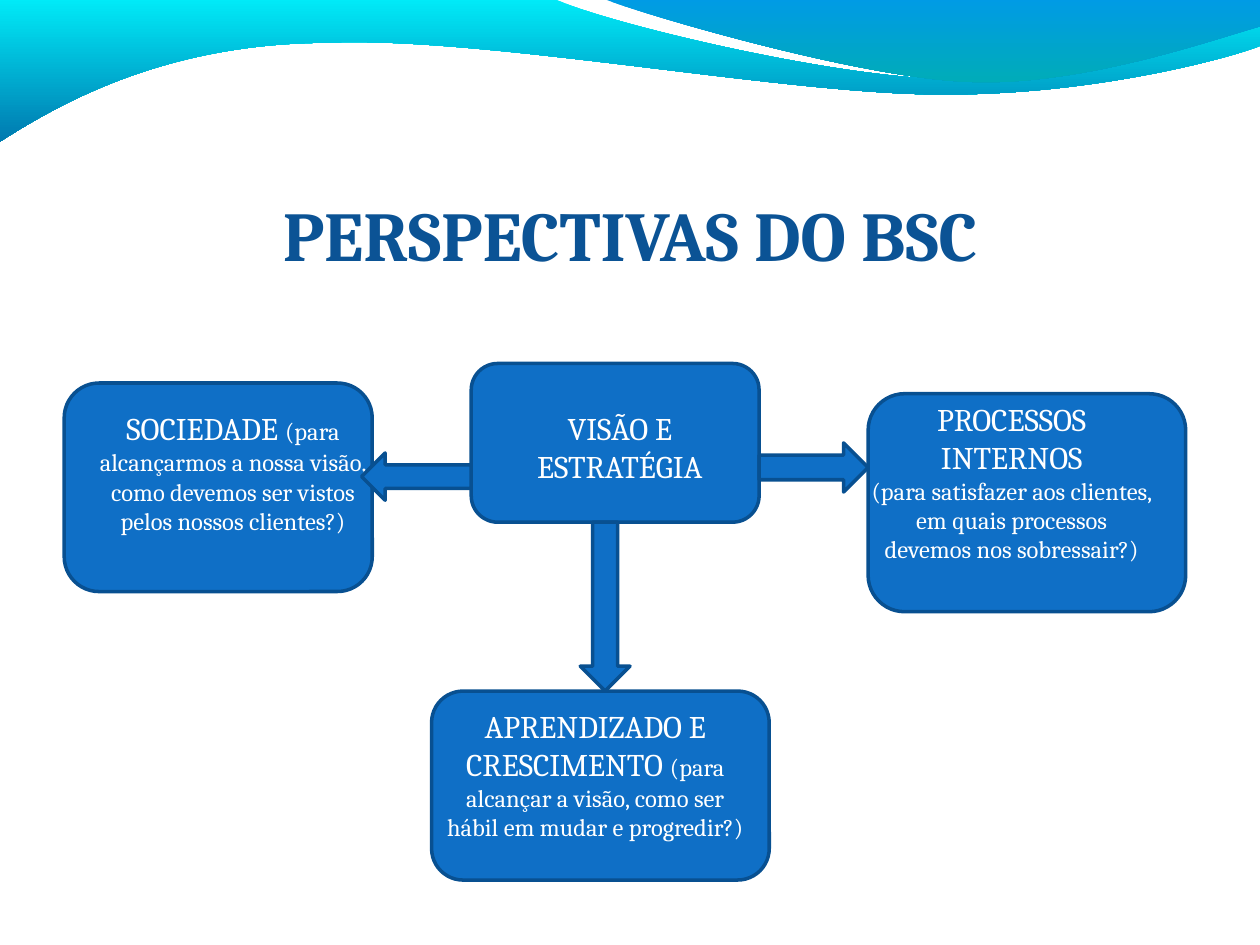
from collections import namedtuple

from lxml import etree
from pptx import Presentation
from pptx.dml.color import RGBColor
from pptx.enum.shapes import MSO_SHAPE
from pptx.enum.text import MSO_ANCHOR, MSO_AUTO_SIZE, PP_ALIGN
from pptx.oxml.ns import qn
from pptx.util import Inches, Pt

ROUNDED = MSO_SHAPE.ROUNDED_RECTANGLE
DOWN, LEFT, RIGHT = MSO_SHAPE.DOWN_ARROW, MSO_SHAPE.LEFT_ARROW, MSO_SHAPE.RIGHT_ARROW
TOP, CENTER, FIXED = MSO_ANCHOR.TOP, PP_ALIGN.CENTER, MSO_AUTO_SIZE.NONE

WIDTH, HEIGHT = Inches(10), Inches(7.5)
UNIT = WIDTH / 100  # the slide is a grid of 100 columns by 75 rows
TITLE_ONLY = 5

COLORS = {
    "fill": "0F6FC6", "line": "085091", "title": "0B5395", "text": "FFFFFF",
    "cyan": "00EBF8", "deep": "0079AF", "blue": "009BE5", "teal": "00ADB6",
}
HEADING = {"name": "Cambria", "size": Pt(18), "bold": False, "color": "text"}
DETAIL = {**HEADING, "size": Pt(14)}
TITLE = {"name": "Cambria", "size": Pt(40), "bold": True, "color": "title"}

Box = namedtuple("Box", "left top width height")

# Each wave is a start point followed by line ends (1 point) or Bézier curves (3 points).
WAVES = [
    ("cyan", "deep", [
        [(0, -0.1)], [(44, -0.1)],
        [(47.6, 1.7), (66.4, 6.3), (75.8, 6.3)],
        [(85.3, 6.3), (95.8, 2.6), (100, 0.9)],
        [(100.1, 3.6)],
        [(98.3, 4.4), (87, 7.6), (74.6, 7.5)],
        [(62.2, 7.5), (38.2, 2.8), (25.7, 3.4)],
        [(12.9, 3.5), (4.6, 8.3), (-0.1, 11.3)],
    ]),
    ("blue", "teal", [
        [(47.9, -0.1)],
        [(50.9, 1.1), (68.2, 6.2), (76.9, 6.5)],
        [(85.6, 6.9), (96.1, 3.2), (100, 2.1)],
        [(100, 0)],
    ]),
]

HUB = Box(37.4, 28.85, 22.85, 12.6)
# Card box, text box relative to the card, paragraphs of runs.
CARDS = [
    (HUB, Box(3.15, 3.15, 17.3, 7), [[("VISÃO E ESTRATÉGIA", HEADING)]]),
    (Box(68.9, 31.25, 25.2, 17.3), Box(-0.8, 0, 24.4, 16.4), [
        [("PROCESSOS INTERNOS", HEADING)],
        [("(para satisfazer aos clientes, em quais processos devemos nos sobressair?)",
          DETAIL)]]),
    (Box(5.1, 30.4, 24.45, 16.55), Box(1.6, 1.6, 23.6, 13.4), [
        [("SOCIEDADE ", HEADING),
         ("(para alcançarmos a nossa visão, como devemos ser vistos pelos nossos clientes?)",
          DETAIL)]]),
    (Box(34.25, 54.85, 26.8, 15), Box(0, 0.8, 26, 14), [
        [("APRENDIZADO E CRESCIMENTO ", HEADING),
         ("(para alcançar a visão, como ser hábil em mudar e progredir?)", DETAIL)]]),
]
# Arrows start at the sides of the hub; boxes are relative to it.
ARROWS = [
    (DOWN, Box(8.65, HUB.height, 3.95, 13.4)),
    (LEFT, Box(-8.7, 7.1, 8.7, 3.75)),
    (RIGHT, Box(HUB.width, 6.3, 8.65, 3.9)),
]


def color(name):
    return RGBColor.from_string(COLORS[name])


def emu(lengths):
    return [round(length * UNIT) for length in lengths]


def inside(box, part):
    """Move a part, given relative to a box, to its place on the slide."""
    return Box(box.left + part.left, box.top + part.top, part.width, part.height)


def bend(shape, segments):
    """Turn each run of three straight pieces that stands for a curve into a Bézier."""
    lines = shape.element.iter(qn("a:lnTo"))
    pieces = list(lines)
    for segment in segments:
        group, pieces = pieces[:len(segment)], pieces[len(segment):]
        if len(segment) == 3:
            curve = etree.Element(qn("a:cubicBezTo"))
            group[0].addprevious(curve)
            for line in group:
                curve.append(line[0])
                line.getparent().remove(line)


def add_wave(slide, top_color, bottom_color, segments):
    points = [emu(point) for segment in segments for point in segment]
    builder = slide.shapes.build_freeform(*points[0])
    builder.add_line_segments(points[1:], close=True)
    wave = builder.convert_to_shape()
    bend(wave, segments[1:])
    wave.shadow.inherit = False
    wave.line.fill.background()
    wave.fill.gradient()
    wave.fill.gradient_angle = 270
    for stop, name in zip(wave.fill.gradient_stops, (top_color, bottom_color)):
        stop.color.rgb = color(name)


def add_block(slide, kind, box, adjustments):
    block = slide.shapes.add_shape(kind, *emu(box))
    for index, value in enumerate(adjustments):
        block.adjustments[index] = value
    block.shadow.inherit = False
    block.fill.solid()
    block.fill.fore_color.rgb = color("fill")
    block.line.color.rgb = color("line")
    block.line.width = Pt(2)


def write(shape, paragraphs):
    """Fill a shape with centred paragraphs, each a list of (text, format) runs."""
    frame = shape.text_frame
    for name, value in {"word_wrap": True, "auto_size": FIXED,
                        "vertical_anchor": TOP}.items():
        setattr(frame, name, value)
    for index, runs in enumerate(paragraphs):
        paragraph = frame.add_paragraph() if index else frame.paragraphs[0]
        paragraph.alignment = CENTER
        for text, style in runs:
            run = paragraph.add_run()
            run.text = text
            for name, value in style.items():
                if name == "color":
                    run.font.color.rgb = color(value)
                else:
                    setattr(run.font, name, value)


def add_title(slide, box):
    title = slide.shapes.title
    for name, value in zip(box._fields, emu(box)):
        setattr(title, name, value)
    write(title, [[("PERSPECTIVAS DO BSC", TITLE)]])


def add_card(slide, box, text_box, paragraphs):
    add_block(slide, ROUNDED, box, [0.167])
    write(slide.shapes.add_textbox(*emu(inside(box, text_box))), paragraphs)


def main():
    presentation = Presentation()
    presentation.slide_width, presentation.slide_height = WIDTH, HEIGHT
    slide = presentation.slides.add_slide(presentation.slide_layouts[TITLE_ONLY])
    for wave in WAVES:
        add_wave(slide, *wave)
    add_title(slide, Box(14.55, 14.7, 70.9, 7.7))
    for card in CARDS:
        add_card(slide, *card)
    for kind, box in ARROWS:
        add_block(slide, kind, inside(HUB, box), [0.5, 0.5])
    presentation.save("out.pptx")


if __name__ == "__main__":
    main()
